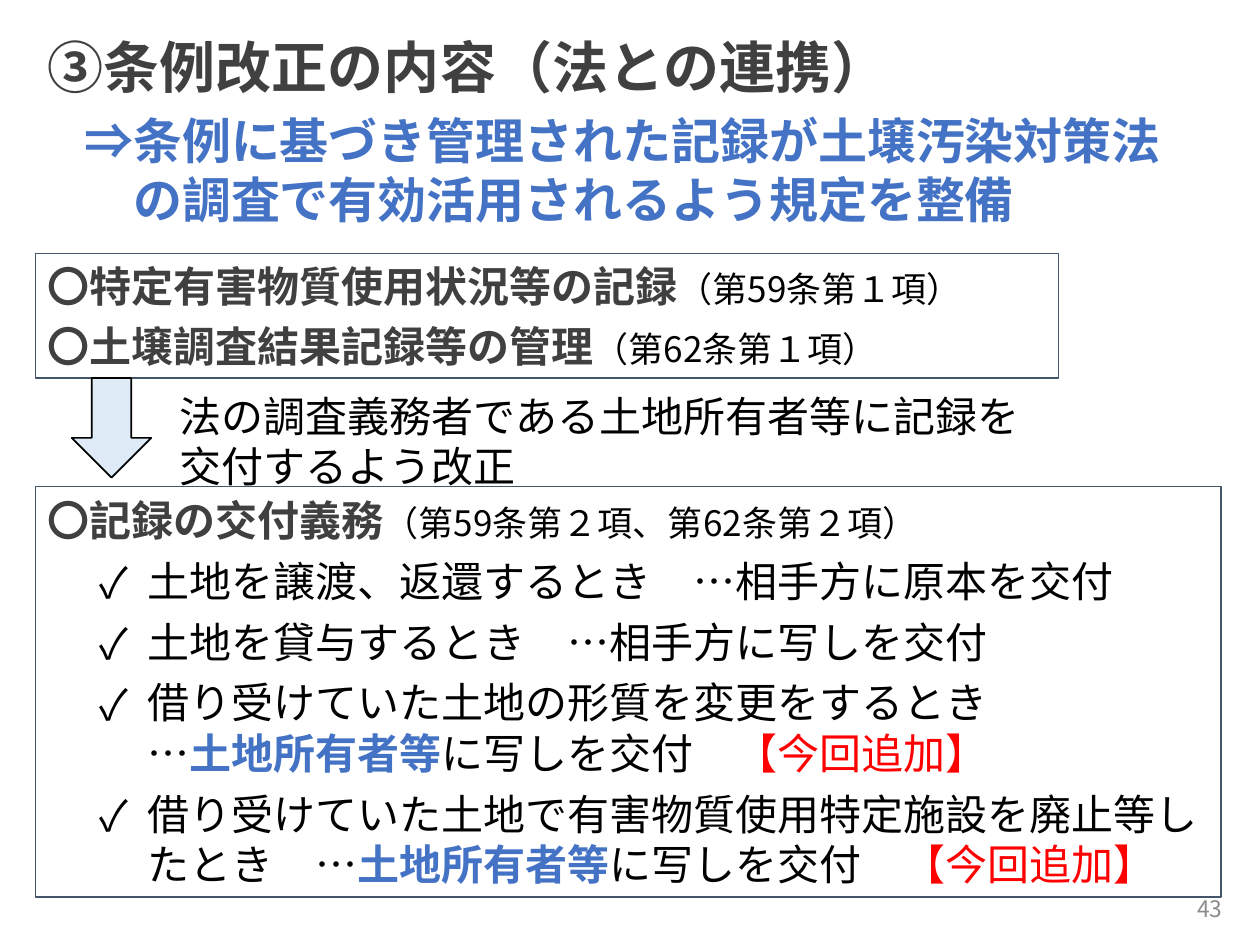
"""Build the slide on passing on soil records under the revised ordinance."""
from lxml import etree
from pptx import Presentation
from pptx.dml.color import RGBColor
from pptx.enum import shapes, text
from pptx.oxml import ns
from pptx.util import Pt

FONT = "Noto Sans CJK JP"
BLACK = RGBColor(0, 0, 0)
WHITE = RGBColor(255, 255, 255)
DARK = RGBColor(0x40, 0x40, 0x40)
GRAY = RGBColor(0x8C, 0x8C, 0x8C)
BLUE = RGBColor(0x44, 0x72, 0xC4)
RED = RGBColor(255, 0, 0)
SLATE = RGBColor(0x44, 0x54, 0x6A)
PALE_BLUE = RGBColor(0xDE, 0xEB, 0xF7)

STYLES = {
    "title": (32, DARK, True),
    "lead": (28, BLUE, True),
    "item": (24, DARK, True),
    "article": (20, BLACK, False),
    "body": (24, BLACK, False),
    "owner": (24, BLUE, True),
    "new": (24, RED, False),
    "number": (13, GRAY, False),
}

TITLE = [[("③条例改正の内容（法との連携）", "title")]]
LEAD = [
    [("⇒条例に基づき管理された記録が土壌汚染対策法", "lead")],
    [("　の調査で有効活用されるよう規定を整備", "lead")],
]
RECORDS = [
    [("〇特定有害物質使用状況等の記録", "item"), ("（第59条第１項）", "article")],
    [("〇土壌調査結果記録等の管理", "item"), ("（第62条第１項）", "article")],
]
OWNER_COPY = [("土地所有者等", "owner"), ("に写しを交付　", "body"), ("【今回追加】", "new")]
DUTIES = [
    [("〇記録の交付義務", "item"), ("（第59条第２項、第62条第２項）", "article")],
    [("土地を譲渡、返還するとき　…相手方に原本を交付", "body")],
    [("土地を貸与するとき　…相手方に写しを交付", "body")],
    [("借り受けていた土地の形質を変更をするとき\n…", "body")] + OWNER_COPY,
    [("借り受けていた土地で有害物質使用特定施設を廃止等したとき　…", "body")] + OWNER_COPY,
]
REVISION = [[("法の調査義務者である土地所有者等に記録を交付するよう改正", "body")]]
PAGE = [[("43", "number")]]

LEFT = 20.16
TITLE_AREA = (LEFT, 15.12, 602.64, 44.64)
LEAD_AREA = (41.04, 59.76, 635.04, 74.88)
RECORDS_AREA = (LEFT, 144.72, 584.64, 71.28)
DUTIES_AREA = (LEFT, 277.92, 677.52, 234.72)
REVISION_AREA = (95.76, 219.6, 509.04, 65.52)
ARROW_AREA = (35.28, 221.76, 56.88, 45.36)
PAGE_AREA = (543.6, 504.72, 162, 28.8)


def add_bullet(paragraph):
    properties = paragraph._p.get_or_add_pPr()
    properties.set("marL", str(Pt(56.88)))
    properties.set("indent", str(Pt(-27.36)))
    etree.SubElement(properties, ns.qn("a:buFont")).set("typeface", FONT)
    etree.SubElement(properties, ns.qn("a:buChar")).set("char", "✓")


def add_run(paragraph, wording, style):
    size, color, bold = STYLES[style]
    for index, line in enumerate(wording.split("\n")):
        if index:
            paragraph.add_line_break()
        run = paragraph.add_run()
        run.text = line
        run.font.size, run.font.bold, run.font.name = Pt(size), bold, FONT
        run.font.color.rgb = color
        east_asian = etree.SubElement(run._r.get_or_add_rPr(), ns.qn("a:ea"))
        east_asian.set("typeface", FONT)


def write(shape, paragraphs, align=text.PP_ALIGN.LEFT, anchor=text.MSO_ANCHOR.TOP,
          gap=0, bullets_from=None, grow=False):
    frame = shape.text_frame
    frame.word_wrap = True
    frame.vertical_anchor = anchor
    sizing = text.MSO_AUTO_SIZE
    frame.auto_size = sizing.SHAPE_TO_FIT_TEXT if grow else sizing.NONE
    for index, runs in enumerate(paragraphs):
        paragraph = frame.add_paragraph() if index else frame.paragraphs[0]
        if bullets_from is not None and index >= bullets_from:
            add_bullet(paragraph)
        paragraph.alignment = align
        paragraph.space_before = Pt(gap if index else 0)
        for wording, style in runs:
            add_run(paragraph, wording, style)


def add_text_box(slide, area, paragraphs, **layout):
    write(slide.shapes.add_textbox(*map(Pt, area)), paragraphs, **layout)


def add_shape(slide, kind, area, fill, line, width):
    shape = slide.shapes.add_shape(kind, *map(Pt, area))
    shape.shadow.inherit = False
    shape.fill.solid()
    shape.fill.fore_color.rgb = fill
    shape.line.color.rgb = line
    shape.line.width = Pt(width)
    return shape


def add_panel(slide, area, paragraphs, **layout):
    panel = add_shape(slide, shapes.MSO_SHAPE.RECTANGLE, area, WHITE, SLATE, 0.75)
    write(panel, paragraphs, anchor=text.MSO_ANCHOR.MIDDLE, gap=6, grow=True, **layout)


def main():
    presentation = Presentation()
    presentation.slide_width, presentation.slide_height = Pt(720), Pt(540)
    slide = presentation.slides.add_slide(presentation.slide_layouts[5])

    title = slide.shapes.title
    title.left, title.top, title.width, title.height = map(Pt, TITLE_AREA)
    write(title, TITLE)

    add_text_box(slide, PAGE_AREA, PAGE, align=text.PP_ALIGN.RIGHT,
                 anchor=text.MSO_ANCHOR.MIDDLE)
    add_text_box(slide, LEAD_AREA, LEAD, grow=True)
    add_panel(slide, RECORDS_AREA, RECORDS)
    add_panel(slide, DUTIES_AREA, DUTIES, bullets_from=1)
    add_text_box(slide, REVISION_AREA, REVISION, grow=True)
    arrow = add_shape(slide, shapes.MSO_SHAPE.RIGHT_ARROW, ARROW_AREA, PALE_BLUE, BLACK, 1)
    arrow.rotation = 90

    presentation.save("out.pptx")


if __name__ == "__main__":
    main()
